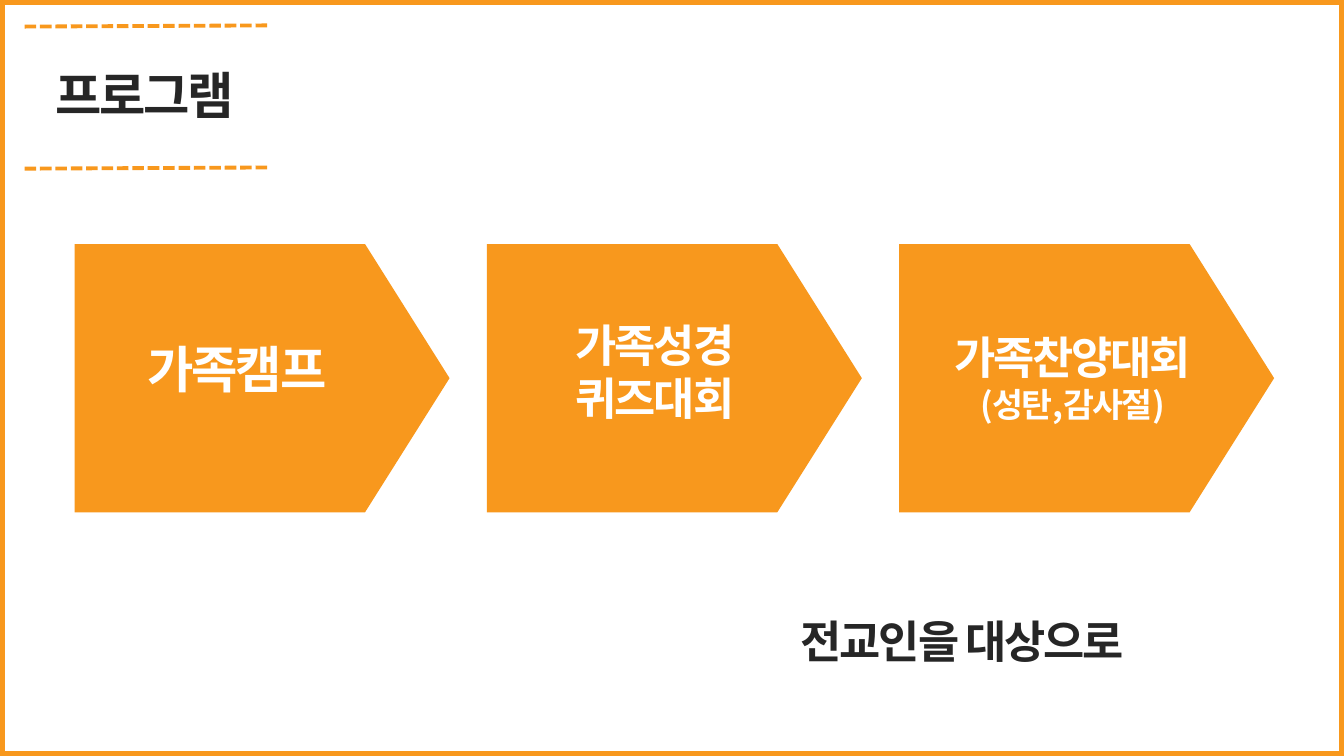
from dataclasses import dataclass

from lxml import etree
from pptx import Presentation
from pptx.dml.color import RGBColor
from pptx.enum import dml, shapes, text
from pptx.oxml import ns
from pptx.util import Cm, Pt


@dataclass(frozen=True)
class Theme:
    orange = RGBColor(0xF8, 0x98, 0x1D)
    dark = RGBColor(0x26, 0x26, 0x26)
    white = RGBColor(0xFF, 0xFF, 0xFF)
    font = "Noto Sans CJK KR"
    large, medium, small = Pt(36), Pt(32), Pt(24)
    frame_line, rule_line = Pt(3.75), Pt(2.75)
    tracking = "-150"


theme = Theme()


def write_lines(sp, lines, color):
    """Fill a shape with centred bold paragraphs, given as (words, size) pairs."""
    tf = sp.text_frame
    tf.word_wrap = True
    tf.auto_size = text.MSO_AUTO_SIZE.NONE
    tf.vertical_anchor = text.MSO_ANCHOR.MIDDLE
    for i, (words, size) in enumerate(lines):
        p = tf.add_paragraph() if i else tf.paragraphs[0]
        p.alignment = text.PP_ALIGN.CENTER
        r = p.add_run()
        r.text = words
        r.font.size, r.font.bold, r.font.name = size, True, theme.font
        r.font.color.rgb = color
        rPr = r.font._element
        rPr.set("spc", theme.tracking)
        etree.SubElement(rPr, ns.qn("a:ea")).set("typeface", theme.font)


prs = Presentation()
prs.slide_width, prs.slide_height = Cm(33.87), Cm(19.05)
s = prs.slides.add_slide(prs.slide_layouts[5])

# Frame
frame = s.shapes.add_shape(shapes.MSO_SHAPE.RECTANGLE, Cm(0.05), Cm(0.05), Cm(33.77), Cm(18.95))
frame.shadow.inherit = False
frame.fill.background()
frame.line.color.rgb = theme.orange
frame.line.width = theme.frame_line

# Title between two dashed rules
for y in (0.64, 4.22):
    rule = s.shapes.add_connector(shapes.MSO_CONNECTOR.STRAIGHT, Cm(6.73), Cm(y), Cm(0.58), Cm(y + 0.03))
    rule.line.color.rgb = theme.orange
    rule.line.width = theme.rule_line
    rule.line.dash_style = dml.MSO_LINE.SQUARE_DOT
    etree.SubElement(rule._element.spPr, ns.qn("a:effectLst"))

title = s.shapes.title
title.left, title.top, title.width, title.height = Cm(0.38), Cm(1.47), Cm(6.53), Cm(1.8)
write_lines(title, [("프로그램", theme.large)], theme.dark)

# Program arrows
for i in range(3):
    arrow = s.shapes.add_shape(shapes.MSO_SHAPE.PENTAGON, Cm(1.88 + i * 10.39), Cm(6.15), Cm(9.45), Cm(6.76))
    arrow.adjustments[0] = 0.315
    arrow.shadow.inherit = False
    arrow.fill.solid()
    arrow.fill.fore_color.rgb = theme.orange
    arrow.line.fill.background()

# Program names and the audience note: left, top, width, height, colour, lines
labels = [
    (2.44, 8.38, 7.06, 1.8, theme.white, [("가족캠프", theme.large)]),
    (12.7, 7.85, 7.62, 3, theme.white, [("가족성경", theme.medium), ("퀴즈대회", theme.medium)]),
    (23.5, 8.18, 7.06, 2.64, theme.white, [("가족찬양대회", theme.medium), ("(성탄,감사절)", theme.small)]),
    (15.29, 15.32, 17.93, 1.63, theme.dark, [("전교인을 대상으로", theme.medium)]),
]
for *box, color, lines in labels:
    write_lines(s.shapes.add_textbox(*map(Cm, box)), lines, color)

prs.save("out.pptx")
